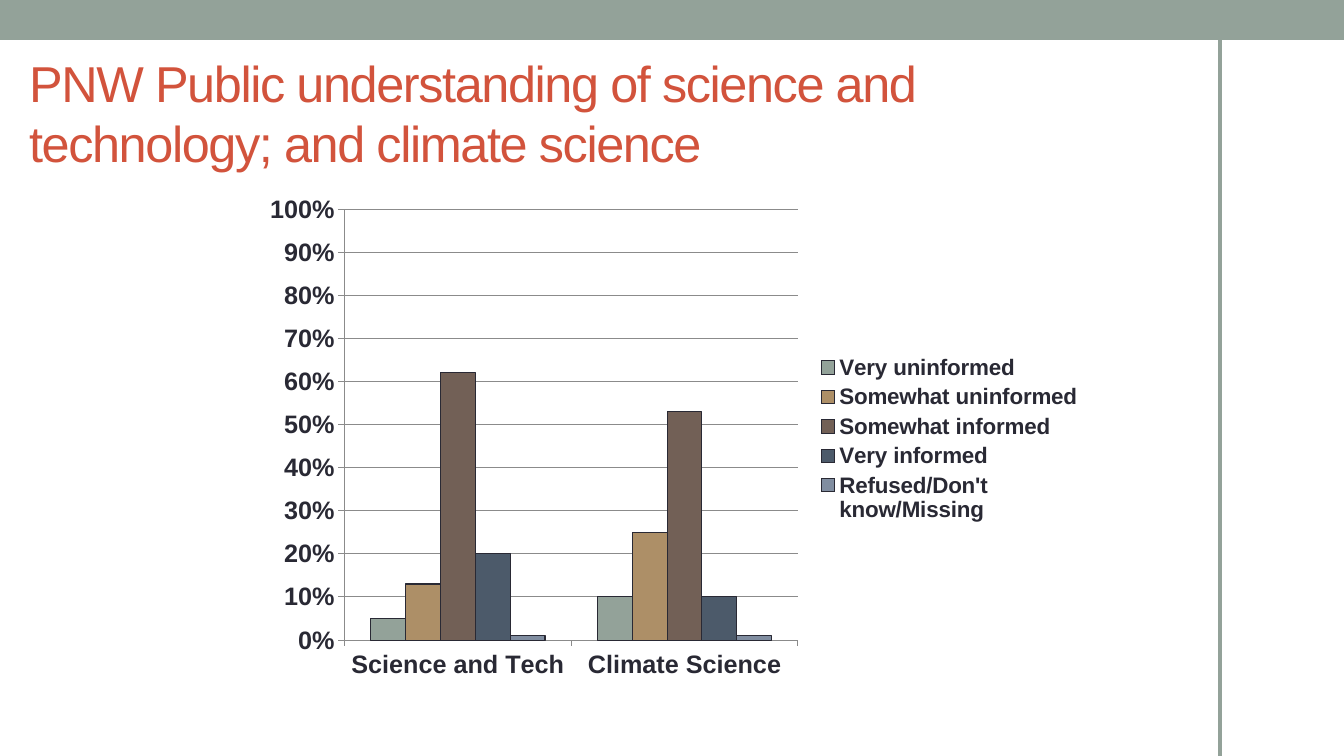
import pptx
import pptx.chart.data
import pptx.dml.color
import pptx.enum.chart
import pptx.enum.shapes
import pptx.enum.text
import pptx.oxml
import pptx.oxml.ns
import pptx.util

EMU_PER_PX = 914400 / 100.8
FONT = "Arial"
COLORS = {
    "sage": "93A299",
    "title": "D2533C",
    "ink": "292934",
    "grid": "8B8B8B",
}
CATEGORIES = ["Science and Tech", "Climate Science"]
ANSWERS = [
    ("Very uninformed", (0.05, 0.10), "93A299"),
    ("Somewhat uninformed", (0.13, 0.25), "AD8F67"),
    ("Somewhat informed", (0.62, 0.53), "726056"),
    ("Very informed", (0.20, 0.10), "4C5A6A"),
    ("Refused/Don't know/Missing", (0.01, 0.01), "808DA0"),
]


def px(*lengths):
    return [pptx.util.Emu(round(length * EMU_PER_PX)) for length in lengths]


def rgb(value):
    return pptx.dml.color.RGBColor.from_string(value)


def apply(target, settings):
    for attribute, value in settings.items():
        setattr(target, attribute, value)


def style_font(font, size, color, bold=False):
    apply(font, {"name": FONT, "size": pptx.util.Pt(size), "bold": bold})
    font.color.rgb = rgb(color)


def style_line(line, color, width):
    line.color.rgb = rgb(color)
    line.width = pptx.util.Pt(width)


def add_top_band(slide):
    band = slide.shapes.add_shape(
        pptx.enum.shapes.MSO_SHAPE.RECTANGLE, *px(0, 0, 1344, 40))
    band.shadow.inherit = False
    band.fill.solid()
    band.fill.fore_color.rgb = rgb(COLORS["sage"])
    band.line.fill.background()


def add_side_rule(slide):
    rule = slide.shapes.add_connector(
        pptx.enum.shapes.MSO_CONNECTOR.STRAIGHT, *px(1220, 38, 1220, 756))
    style_line(rule.line, COLORS["sage"], 3.25)
    rule._element.spPr.append(pptx.oxml.parse_xml(
        f"<a:effectLst {pptx.oxml.ns.nsdecls('a')}/>"))


def set_title(slide, wording):
    title = slide.shapes.title
    apply(title, dict(zip(("left", "top", "width", "height"),
                          px(19, 58, 1068, 109))))
    frame = title.text_frame
    apply(frame, {
        "text": wording,
        "word_wrap": True,
        "auto_size": pptx.enum.text.MSO_AUTO_SIZE.NONE,
        "vertical_anchor": pptx.enum.text.MSO_ANCHOR.MIDDLE,
    })
    paragraph = frame.paragraphs[0]
    paragraph.alignment = pptx.enum.text.PP_ALIGN.LEFT
    run = paragraph.runs[0]
    style_font(run.font, 36, COLORS["title"])
    run.font._element.set("spc", "-100")


def layout_xml(x, y, w, h, target=""):
    """Manual layout, with lengths as fractions of the chart."""
    return pptx.oxml.parse_xml(
        f"<c:layout {pptx.oxml.ns.nsdecls('c')}><c:manualLayout>{target}"
        '<c:xMode val="edge"/><c:yMode val="edge"/>'
        f'<c:x val="{x}"/><c:y val="{y}"/><c:w val="{w}"/><c:h val="{h}"/>'
        "</c:manualLayout></c:layout>")


def style_axis(axis):
    axis.major_tick_mark = pptx.enum.chart.XL_TICK_MARK.OUTSIDE
    style_font(axis.tick_labels.font, 18, COLORS["ink"], bold=True)
    style_line(axis.format.line, COLORS["grid"], 0.75)


def style_legend(chart):
    chart.has_legend = True
    legend = chart.legend
    apply(legend, {"position": pptx.enum.chart.XL_LEGEND_POSITION.RIGHT,
                   "include_in_layout": False})
    style_font(legend.font, 16, COLORS["ink"], bold=True)
    element = legend._element
    for old in element.findall(pptx.oxml.ns.qn("c:layout")):
        element.remove(old)
    element.find(pptx.oxml.ns.qn("c:legendPos")).addnext(
        layout_xml(0.67, 0.33, 0.32, 0.35))


def add_answer_chart(slide):
    answer_data = pptx.chart.data.CategoryChartData(number_format="0%")
    answer_data.categories = CATEGORIES
    for name, shares, _ in ANSWERS:
        answer_data.add_series(name, shares)
    chart = slide.shapes.add_chart(
        pptx.enum.chart.XL_CHART_TYPE.COLUMN_CLUSTERED,
        *px(252, 184, 840, 504), answer_data).chart
    chart.has_title = False
    style_font(chart.font, 10, COLORS["ink"])

    plot = chart.plots[0]
    apply(plot, {"gap_width": 150, "overlap": 0, "vary_by_categories": False})
    for series, (_, _, color) in zip(plot.series, ANSWERS):
        series.format.fill.solid()
        series.format.fill.fore_color.rgb = rgb(color)
        style_line(series.format.line, COLORS["ink"], 0.75)

    style_axis(chart.category_axis)
    shares_axis = chart.value_axis
    style_axis(shares_axis)
    apply(shares_axis, {"minimum_scale": 0, "maximum_scale": 1,
                        "major_unit": 0.1, "has_major_gridlines": True})
    apply(shares_axis.tick_labels, {"number_format": "0%",
                                    "number_format_is_linked": False})
    style_line(shares_axis.major_gridlines.format.line, COLORS["grid"], 0.75)

    plot_area = chart._chartSpace.chart.plotArea
    for old in plot_area.findall(pptx.oxml.ns.qn("c:layout")):
        plot_area.remove(old)
    plot_area.insert(0, layout_xml(
        0.11, 0.05, 0.54, 0.855, '<c:layoutTarget val="inner"/>'))
    style_legend(chart)


def main():
    deck = pptx.Presentation()
    deck.slide_width, deck.slide_height = px(1344, 756)
    slide = deck.slides.add_slide(deck.slide_layouts[5])
    add_top_band(slide)
    add_side_rule(slide)
    add_answer_chart(slide)
    set_title(slide, "PNW Public understanding of science and technology; "
                     "and climate science")
    deck.save("out.pptx")


if __name__ == "__main__":
    main()
